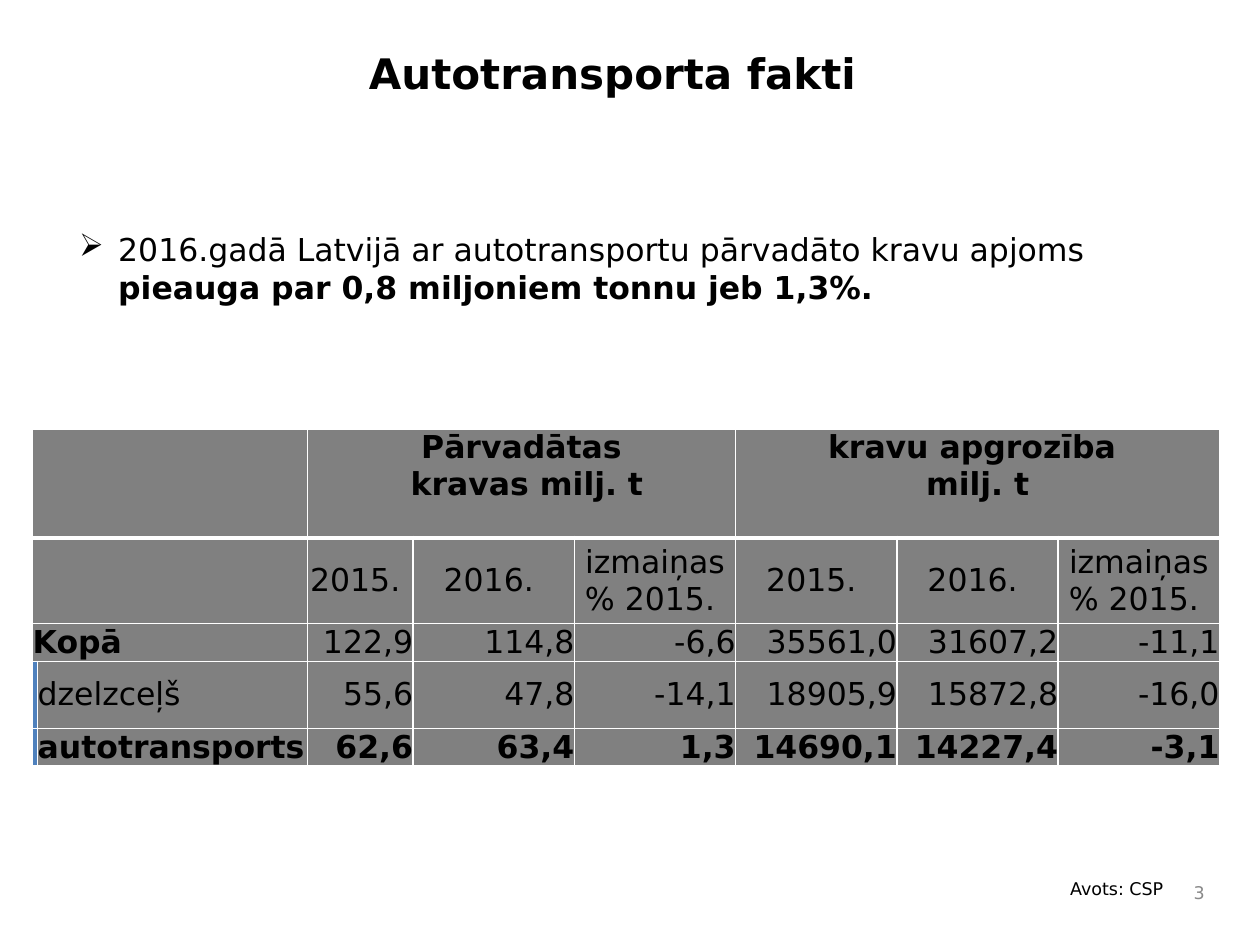
"""Build the road transport facts slide."""
from dataclasses import dataclass

from lxml.etree import SubElement
from pptx import Presentation
from pptx.dml.color import RGBColor
from pptx.enum.text import MSO_ANCHOR, PP_ALIGN
from pptx.oxml.ns import qn
from pptx.util import Inches, Pt

FONT = "DejaVu Sans"
COLORS = {"text": "000000", "number": "898989", "cell": "808080",
          "marker": "4F81BD", "border": "FFFFFF"}
COLUMN_WIDTHS = [0.03, 2.14, 0.84] + [1.28] * 5
ROW_HEIGHTS = [0.86, 0.68, 0.29, 0.53, 0.29]
YEAR_HEADINGS = ["2015. ", "2016. ", "izmaiņas % 2015. "]


@dataclass
class Span:
    text: str
    bold: bool = False


@dataclass
class TextBlock:
    left: float
    top: float
    width: float
    height: float
    spans: list[Span]
    size: int
    color: str = "text"
    align: PP_ALIGN = PP_ALIGN.LEFT
    anchor: MSO_ANCHOR = MSO_ANCHOR.TOP
    bullet: str = ""


@dataclass
class Cell:
    row: int
    column: int
    lines: list[str]
    align: PP_ALIGN = PP_ALIGN.RIGHT
    bold: bool = False
    merged: int = 1
    fill: str = "cell"
    anchor: MSO_ANCHOR = MSO_ANCHOR.MIDDLE


BLOCKS = [
    TextBlock(2.83, 0.33, 6.67, 1.17, [Span("Autotransporta fakti", True)], 24),
    TextBlock(5.33, 6.92, 4, 0.33, [Span("Avots: CSP")], 10, align=PP_ALIGN.RIGHT),
    TextBlock(9.33, 6.92, 0.33, 0.33, [Span("3")], 10, "number",
              PP_ALIGN.RIGHT, MSO_ANCHOR.MIDDLE),
    TextBlock(0.53, 1.78, 9.32, 0.98, [
        Span("2016.gadā Latvijā ar autotransportu pārvadāto kravu apjoms "),
        Span("pieauga par 0,8 miljoniem tonnu jeb 1,3%.", True)], 18, bullet="➢"),
]
GROUPS = [["Pārvadātas", " kravas milj. t"], ["kravu apgrozība ", "milj. t"]]
RECORDS = [
    ("Kopā", ["122,9", "114,8", "-6,6", "35561,0", "31607,2", "-11,1"]),
    ("dzelzceļš", ["55,6", "47,8", "-14,1", "18905,9", "15872,8", "-16,0"]),
    ("autotransports", ["62,6", "63,4", "1,3", "14690,1", "14227,4", "-3,1"]),
]


def apply_format(target, values: dict) -> None:
    """Set every attribute named in the values."""
    for name, value in values.items():
        setattr(target, name, value)


def style_font(font, size: int, color: str, bold: bool) -> None:
    """Set the typeface, size, weight and colour."""
    apply_format(font, {"name": FONT, "size": Pt(size), "bold": bold})
    font.color.rgb = RGBColor.from_string(COLORS[color])


def add_bullet(para, symbol: str) -> None:
    """Give the paragraph a hanging bullet."""
    properties = para._p.get_or_add_pPr()
    properties.set("marL", str(Inches(0.31)))
    properties.set("indent", str(-Inches(0.31)))
    SubElement(properties, qn("a:buChar"), char=symbol)


def add_text(page, block: TextBlock) -> None:
    """Add a text box holding one paragraph."""
    box = page.shapes.add_textbox(Inches(block.left), Inches(block.top),
                                  Inches(block.width), Inches(block.height))
    apply_format(box.text_frame, {"word_wrap": True, "vertical_anchor": block.anchor})
    para = box.text_frame.paragraphs[0]
    para.alignment = block.align
    if block.bullet:
        add_bullet(para, block.bullet)
    for item in block.spans:
        span = para.add_run()
        span.text = item.text
        style_font(span.font, block.size, block.color, item.bold)


def set_borders(cell, bottom: int) -> None:
    """Draw the four white borders of a cell."""
    properties = cell._tc.get_or_add_tcPr()
    widths = {"lnL": 1, "lnR": 1, "lnT": 1, "lnB": bottom}
    for index, (side, width) in enumerate(widths.items()):
        line = SubElement(properties, qn(f"a:{side}"), w=str(Pt(width)))
        fill = SubElement(line, qn("a:solidFill"))
        SubElement(fill, qn("a:srgbClr"), val=COLORS["border"])
        properties.insert(index, line)


def fill_cell(table, item: Cell) -> None:
    """Merge, colour and write one table cell."""
    cell = table.cell(item.row, item.column)
    if item.merged > 1:
        cell.merge(table.cell(item.row, item.column + item.merged - 1))
    apply_format(cell, {"margin_left": 0, "margin_right": 0, "margin_top": 0,
                        "margin_bottom": 0, "vertical_anchor": item.anchor})
    for column in range(item.column, item.column + item.merged):
        part = table.cell(item.row, column)
        part.fill.solid()
        part.fill.fore_color.rgb = RGBColor.from_string(COLORS[item.fill])
        set_borders(part, 3 if item.row == 0 else 1)
    cell.text = "\n".join(item.lines)
    for para in cell.text_frame.paragraphs:
        para.alignment = item.align
        style_font(para.font, 18, "text", item.bold)
        for span in para.runs:
            style_font(span.font, 18, "text", item.bold)


def table_cells() -> list[Cell]:
    """List the heading and data cells."""
    cells = [Cell(row, 0, [], merged=2) for row in range(2)]
    cells += [Cell(0, 2 + 3 * index, lines, PP_ALIGN.CENTER, True, 3,
                   anchor=MSO_ANCHOR.TOP) for index, lines in enumerate(GROUPS)]
    cells += [Cell(1, column, [heading], PP_ALIGN.CENTER)
              for column, heading in enumerate(YEAR_HEADINGS * 2, start=2)]
    for row, (label, values) in enumerate(RECORDS, start=2):
        is_total, is_road = row == 2, row == 4
        if is_total:
            cells.append(Cell(row, 0, [label], PP_ALIGN.LEFT, True, 2))
        else:
            cells.append(Cell(row, 0, [], fill="marker"))
            cells.append(Cell(row, 1, [label], PP_ALIGN.LEFT, is_road))
        cells += [Cell(row, column, [value], bold=is_road)
                  for column, value in enumerate(values, start=2)]
    return cells


def add_freight_table(page) -> None:
    """Add the freight table."""
    table = page.shapes.add_table(
        len(ROW_HEIGHTS), len(COLUMN_WIDTHS), Inches(0.26), Inches(3.41),
        Inches(sum(COLUMN_WIDTHS)), Inches(sum(ROW_HEIGHTS))).table
    apply_format(table, {"first_row": False, "horz_banding": False})
    for column, width in zip(table.columns, COLUMN_WIDTHS):
        column.width = Inches(width)
    for row, height in zip(table.rows, ROW_HEIGHTS):
        row.height = Inches(height)
    for item in table_cells():
        fill_cell(table, item)


def main() -> None:
    """Build and save the deck."""
    deck = Presentation()
    apply_format(deck, {"slide_width": Inches(10), "slide_height": Inches(7.5)})
    page = deck.slides.add_slide(deck.slide_layouts[6])
    for block in BLOCKS:
        add_text(page, block)
    add_freight_table(page)
    deck.save("out.pptx")


if __name__ == "__main__":
    main()
